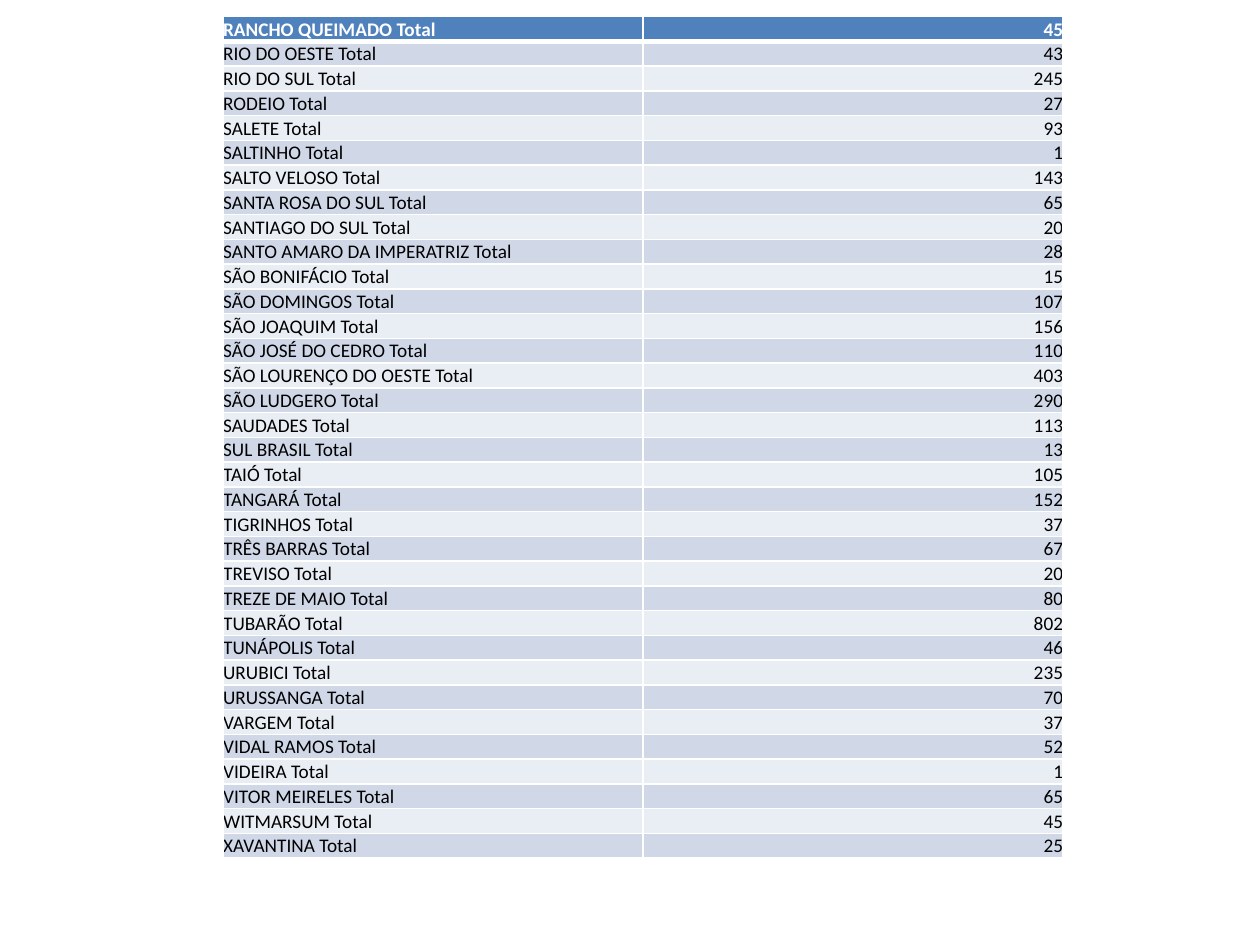
"""Build a slide with a two-column table of totals by municipality."""
from lxml.etree import SubElement
from pptx import Presentation
from pptx.dml.color import RGBColor
from pptx.enum.text import MSO_ANCHOR, PP_ALIGN
from pptx.oxml.ns import qn
from pptx.util import Pt

WHITE = RGBColor(0xFF, 0xFF, 0xFF)
BLACK = RGBColor(0x00, 0x00, 0x00)
HEADER = RGBColor(0x4F, 0x81, 0xBD)
BAND_DARK = RGBColor(0xD0, 0xD8, 0xE8)
BAND_LIGHT = RGBColor(0xE9, 0xED, 0xF4)

TOTALS = [
    ("RANCHO QUEIMADO", 45),
    ("RIO DO OESTE", 43),
    ("RIO DO SUL", 245),
    ("RODEIO", 27),
    ("SALETE", 93),
    ("SALTINHO", 1),
    ("SALTO VELOSO", 143),
    ("SANTA ROSA DO SUL", 65),
    ("SANTIAGO DO SUL", 20),
    ("SANTO AMARO DA IMPERATRIZ", 28),
    ("SÃO BONIFÁCIO", 15),
    ("SÃO DOMINGOS", 107),
    ("SÃO JOAQUIM", 156),
    ("SÃO JOSÉ DO CEDRO", 110),
    ("SÃO LOURENÇO DO OESTE", 403),
    ("SÃO LUDGERO", 290),
    ("SAUDADES", 113),
    ("SUL BRASIL", 13),
    ("TAIÓ", 105),
    ("TANGARÁ", 152),
    ("TIGRINHOS", 37),
    ("TRÊS BARRAS", 67),
    ("TREVISO", 20),
    ("TREZE DE MAIO", 80),
    ("TUBARÃO", 802),
    ("TUNÁPOLIS", 46),
    ("URUBICI", 235),
    ("URUSSANGA", 70),
    ("VARGEM", 37),
    ("VIDAL RAMOS", 52),
    ("VIDEIRA", 1),
    ("VITOR MEIRELES", 65),
    ("WITMARSUM", 45),
    ("XAVANTINA", 25),
]
ROW_H = Pt(14.17)
COL_W = Pt(240)
CELL_FORMAT = {
    "margin_left": 0,
    "margin_right": 0,
    "margin_top": 0,
    "margin_bottom": 0,
    "vertical_anchor": MSO_ANCHOR.BOTTOM,
}


def add_border(cell, side, width):
    ln = SubElement(cell._tc.get_or_add_tcPr(), qn(f"a:ln{side}"), w=str(Pt(width)))
    fill = SubElement(ln, qn("a:solidFill"))
    SubElement(fill, qn("a:srgbClr"), val=str(WHITE))


prs = Presentation()
prs.slide_width, prs.slide_height = Pt(720), Pt(540)
s = prs.slides.add_slide(prs.slide_layouts[6])
tbl = s.shapes.add_table(
    len(TOTALS), 2, Pt(127.5), Pt(9.5), COL_W * 2, ROW_H * len(TOTALS)
).table
for col in tbl.columns:
    col.width = COL_W

for i, (city, total) in enumerate(TOTALS):
    tbl.rows[i].height = ROW_H
    is_header = i == 0
    band = BAND_DARK if i % 2 else BAND_LIGHT
    font_format = {"name": "Calibri", "size": Pt(11), "bold": is_header}
    columns = ((f"{city} Total", PP_ALIGN.LEFT), (str(total), PP_ALIGN.RIGHT))
    for j, (text, align) in enumerate(columns):
        cell = tbl.cell(i, j)
        for name, value in CELL_FORMAT.items():
            setattr(cell, name, value)
        for side in "LRTB":
            if (i, side) != (1, "T"):
                add_border(cell, side, 3 if is_header and side == "B" else 1)
        cell.fill.solid()
        cell.fill.fore_color.rgb = HEADER if is_header else band
        p = cell.text_frame.paragraphs[0]
        p.alignment = align
        r = p.add_run()
        r.text = text
        for name, value in font_format.items():
            setattr(r.font, name, value)
        r.font.color.rgb = WHITE if is_header else BLACK

prs.save("out.pptx")
